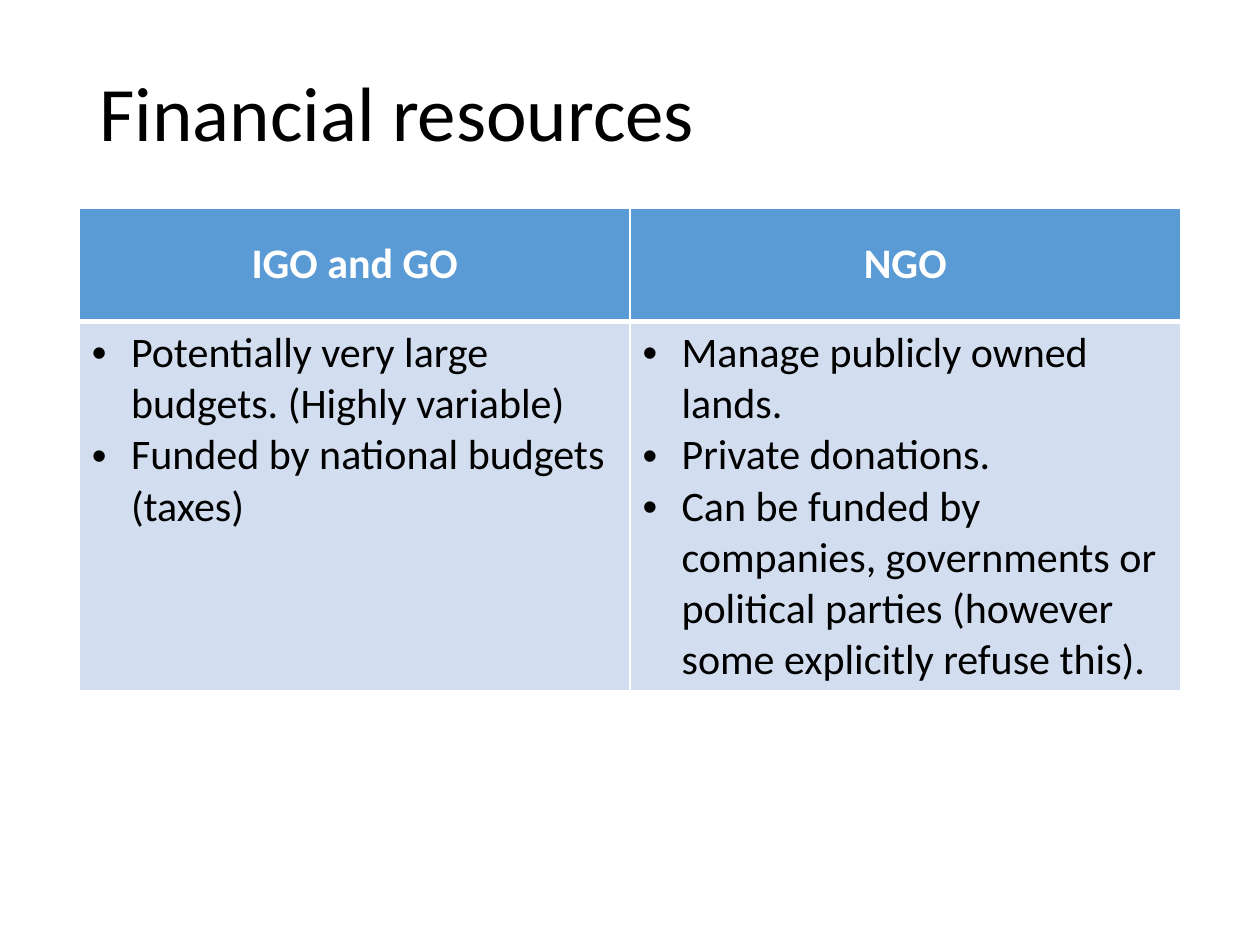
from dataclasses import dataclass

from lxml.etree import SubElement
from pptx import Presentation
from pptx.dml.color import RGBColor
from pptx.enum.text import MSO_ANCHOR, PP_ALIGN
from pptx.oxml.ns import qn
from pptx.util import Inches, Pt


@dataclass(frozen=True)
class Theme:
    font: str = "Calibri"
    title_size: int = 44
    table_size: int = 24
    black: str = "000000"
    white: str = "FFFFFF"
    header_fill: str = "5B9BD5"
    body_fill: str = "D2DEEF"


theme = Theme()
columns = [
    ("IGO and GO", [
        "Potentially very large budgets. (Highly variable)",
        "Funded by national budgets (taxes)",
    ]),
    ("NGO", [
        "Manage publicly owned lands.",
        "Private donations.",
        "Can be funded by companies, governments or political parties "
        "(however some explicitly refuse this).",
    ]),
]


def add_run(paragraph, text, size, color, bold=False):
    run = paragraph.add_run()
    run.text = text
    run.font.name = theme.font
    run.font.size = Pt(size)
    run.font.bold = bold
    run.font.color.rgb = RGBColor.from_string(color)


def style_cell(cell, fill, top_width, bottom_width):
    """Give the cell white borders and a solid fill."""
    properties = cell._tc.get_or_add_tcPr()
    widths = {"a:lnL": 1, "a:lnR": 1, "a:lnT": top_width, "a:lnB": bottom_width}
    for side, width in widths.items():
        line = SubElement(properties, qn(side), w=str(Pt(width)))
        SubElement(SubElement(line, qn("a:solidFill")), qn("a:srgbClr"), val=theme.white)
    cell.fill.solid()
    cell.fill.fore_color.rgb = RGBColor.from_string(fill)


presentation = Presentation()
presentation.slide_width = Inches(10)
presentation.slide_height = Inches(7.5)
slide = presentation.slides.add_slide(presentation.slide_layouts[6])

title = slide.shapes.add_textbox(Inches(0.69), Inches(0.2), Inches(8.62), Inches(1.45))
title.text_frame.word_wrap = True
title.text_frame.vertical_anchor = MSO_ANCHOR.MIDDLE
title_paragraph = title.text_frame.paragraphs[0]
title_paragraph.line_spacing = 0.9
add_run(title_paragraph, "Financial resources", theme.title_size, theme.black)

table = slide.shapes.add_table(
    2, len(columns), Inches(0.63), Inches(1.65), Inches(8.74), Inches(3.83)
).table
table.rows[0].height = Inches(0.9)
table.rows[1].height = Inches(2.93)

for index, (heading, points) in enumerate(columns):
    header = table.cell(0, index)
    style_cell(header, theme.header_fill, top_width=1, bottom_width=3)
    header.vertical_anchor = MSO_ANCHOR.MIDDLE
    paragraph = header.text_frame.paragraphs[0]
    paragraph.alignment = PP_ALIGN.CENTER
    add_run(paragraph, heading, theme.table_size, theme.white, bold=True)

    body = table.cell(1, index)
    style_cell(body, theme.body_fill, top_width=3, bottom_width=1)
    for number, point in enumerate(points):
        frame = body.text_frame
        paragraph = frame.add_paragraph() if number else frame.paragraphs[0]
        properties = paragraph._p.get_or_add_pPr()
        properties.set("marL", str(Inches(0.31)))
        properties.set("indent", str(Inches(-0.31)))
        SubElement(properties, qn("a:buFont"), typeface="Arial")
        SubElement(properties, qn("a:buChar"), char="•")
        add_run(paragraph, point, theme.table_size, theme.black)

presentation.save("out.pptx")
